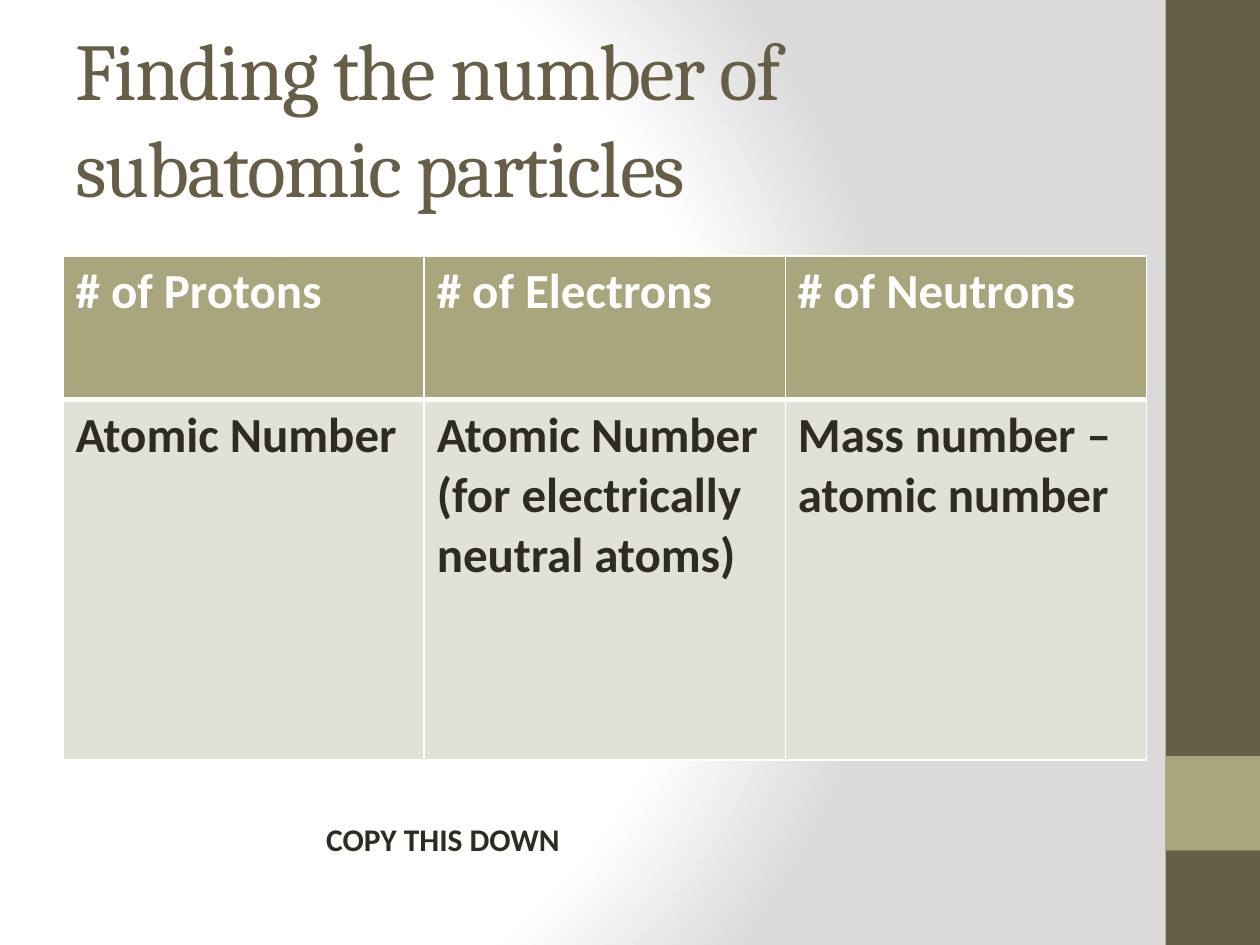
from pptx import Presentation
from pptx.dml.color import RGBColor
from pptx.enum.shapes import MSO_SHAPE
from pptx.enum.text import MSO_ANCHOR, MSO_AUTO_SIZE, PP_ALIGN
from pptx.oxml import parse_xml
from pptx.oxml.ns import nsdecls, qn
from pptx.util import Pt

# Content
TITLE = "Finding the number of subatomic particles"
HEADINGS = ["# of Protons", "# of Electrons", "# of Neutrons"]
RULES = ["Atomic Number",
         "Atomic Number\n(for electrically neutral atoms)",
         "Mass number – atomic number"]
REMINDER = "COPY THIS DOWN"

THEME = {
    "brown": "675E47", "olive": "A9A57C", "pale": "E2E1D7",
    "ink": "2F2B20", "white": "FFFFFF", "grey": "DADADA",
    "heading_font": "Cambria", "body_font": "Calibri",
    "title_size": 46, "table_size": 28, "reminder_size": 18,
}

# Layout, in points
SLIDE_W, SLIDE_H = 720, 540
BAND = 54
TABLE_LEFT, TABLE_TOP, TABLE_W = 36, 146.16, 619.2
ROW_HEIGHTS = [82.08, 206]


def rgb(name):
    return RGBColor.from_string(THEME[name])


def write(frame, text, *, size, color, font="body_font", bold=False, tracking=0):
    frame.word_wrap = True
    frame.text = text
    for paragraph in frame.paragraphs:
        paragraph.alignment = PP_ALIGN.LEFT
        for run in paragraph.runs:
            run.font.name = THEME[font]
            run.font.size = Pt(THEME[size])
            run.font.bold = bold
            run.font.color.rgb = rgb(color)
            if tracking:
                run.font._element.set("spc", str(tracking * 100))


def paint_background(slide):
    slide.background.fill.solid()
    properties = slide.element.find(".//" + qn("p:bgPr"))
    stops = "".join(
        f'<a:gs pos="{at * 1000}"><a:srgbClr val="{THEME[name]}"/></a:gs>'
        for at, name in [(0, "white"), (75, "white"), (100, "grey")])
    gradient = parse_xml(
        f'<a:gradFill {nsdecls("a")} rotWithShape="1"><a:gsLst>{stops}</a:gsLst>'
        '<a:path path="circle"><a:fillToRect l="20000" t="50000" r="100000" b="50000"/>'
        '</a:path></a:gradFill>')
    properties.replace(properties[0], gradient)


def add_band(slide, top, height, color):
    band = slide.shapes.add_shape(MSO_SHAPE.RECTANGLE, Pt(SLIDE_W - BAND), Pt(top),
                                  Pt(BAND), Pt(height))
    band.shadow.inherit = False
    band.fill.solid()
    band.fill.fore_color.rgb = rgb(color)
    band.line.fill.background()


def set_borders(cell, **widths):
    properties = cell._tc.get_or_add_tcPr()
    for index, side in enumerate("LRTB"):
        properties.insert(index, parse_xml(
            f'<a:ln{side} {nsdecls("a")} w="{Pt(widths.get(side, 1))}"><a:solidFill>'
            f'<a:srgbClr val="{THEME["white"]}"/></a:solidFill></a:ln{side}>'))


def add_particle_table(slide):
    table = slide.shapes.add_table(
        len(ROW_HEIGHTS), len(HEADINGS), Pt(TABLE_LEFT), Pt(TABLE_TOP),
        Pt(TABLE_W), Pt(sum(ROW_HEIGHTS))).table
    for column in table.columns:
        column.width = Pt(TABLE_W / len(HEADINGS))
    row_styles = [(HEADINGS, "olive", "white", {"B": 3}),
                  (RULES, "pale", "ink", {"T": 3})]
    for r, (texts, fill, color, borders) in enumerate(row_styles):
        table.rows[r].height = Pt(ROW_HEIGHTS[r])
        for c, text in enumerate(texts):
            cell = table.cell(r, c)
            cell.fill.solid()
            cell.fill.fore_color.rgb = rgb(fill)
            set_borders(cell, **borders)
            write(cell.text_frame, text, size="table_size", color=color, bold=True)


def main():
    deck = Presentation()
    deck.slide_width, deck.slide_height = Pt(SLIDE_W), Pt(SLIDE_H)
    slide = deck.slides.add_slide(deck.slide_layouts[5])
    paint_background(slide)

    # Side bands
    add_band(slide, 0, SLIDE_H, "brown")
    add_band(slide, 432, BAND, "olive")

    # Title
    title = slide.shapes.title
    title.left, title.top, title.width, title.height = Pt(36), Pt(21.6), Pt(600), Pt(90)
    title.text_frame.auto_size = MSO_AUTO_SIZE.NONE
    title.text_frame.vertical_anchor = MSO_ANCHOR.MIDDLE
    write(title.text_frame, TITLE, size="title_size", color="brown",
          font="heading_font", tracking=-1)

    add_particle_table(slide)

    # Reminder
    reminder = slide.shapes.add_textbox(Pt(179.3), Pt(465), Pt(476), Pt(29))
    write(reminder.text_frame, REMINDER, size="reminder_size", color="ink", bold=True)
    reminder.text_frame.auto_size = MSO_AUTO_SIZE.SHAPE_TO_FIT_TEXT

    deck.save("out.pptx")


if __name__ == "__main__":
    main()
